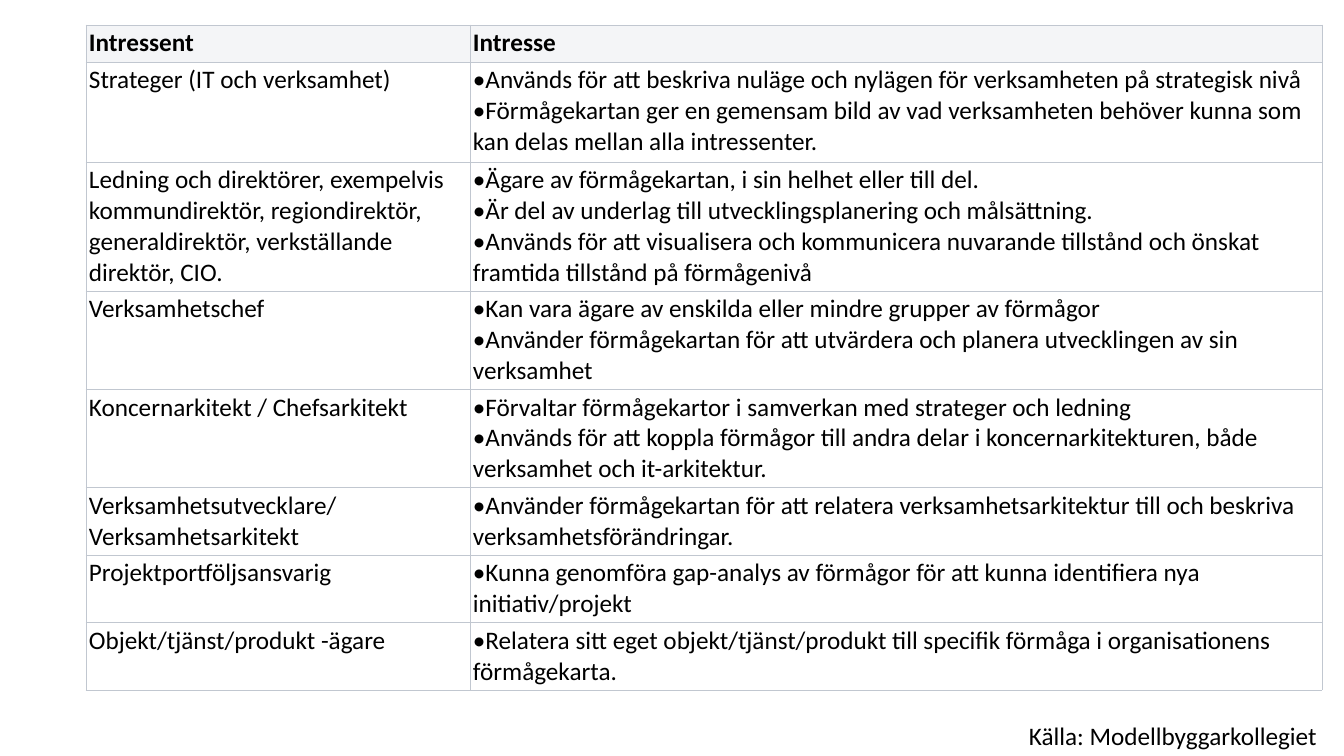
from lxml import etree
from pptx import Presentation
from pptx.dml.color import RGBColor
from pptx.oxml.ns import qn
from pptx.util import Emu, Pt

# Content: stakeholder, interests, row height in px
HEAD = ("Intressent", "Intresse")
HEAD_H = 37
ROWS = [
    ("Strateger (IT och verksamhet)", [
        "Används för att beskriva nuläge och nylägen för verksamheten på strategisk nivå",
        "Förmågekartan ger en gemensam bild av vad verksamheten behöver kunna som kan delas mellan alla intressenter.",
    ], 100),
    ("Ledning och direktörer, exempelvis kommundirektör, regiondirektör, generaldirektör, verkställande direktör, CIO.", [
        "Ägare av förmågekartan, i sin helhet eller till del.",
        "Är del av underlag till utvecklingsplanering och målsättning.",
        "Används för att visualisera och kommunicera nuvarande tillstånd och önskat framtida tillstånd på förmågenivå",
    ], 129),
    ("Verksamhetschef", [
        "Kan vara ägare av enskilda eller mindre grupper av förmågor",
        "Använder förmågekartan för att utvärdera och planera utvecklingen av sin verksamhet",
    ], 98),
    ("Koncernarkitekt / Chefsarkitekt", [
        "Förvaltar förmågekartor i samverkan med strateger och ledning",
        "Används för att koppla förmågor till andra delar i koncernarkitekturen, både verksamhet och it-arkitektur.",
    ], 98),
    ("Verksamhetsutvecklare/ Verksamhetsarkitekt", [
        "Använder förmågekartan för att relatera verksamhetsarkitektur till och beskriva verksamhetsförändringar.",
    ], 67),
    ("Projektportföljsansvarig", [
        "Kunna genomföra gap-analys av förmågor för att kunna identifiera nya initiativ/projekt",
    ], 67),
    ("Objekt/tjänst/produkt -ägare", [
        "Relatera sitt eget objekt/tjänst/produkt till specifik förmåga i organisationens förmågekarta.",
    ], 67),
]
SOURCE = "Källa: Modellbyggarkollegiet"
COLS = (384, 852)
COLORS = {"text": "000000", "head": "F4F5F7", "body": "FFFFFF", "line": "C1C7D0"}
FONT, SIZE = "Calibri", 18
INSET = 3


def px(n):
    return Emu(round(n * 914400 / 100.8))


def color(key):
    return RGBColor.from_string(COLORS[key])


def write(frame, lines, bold=False, bullet=False):
    for i, line in enumerate(lines):
        para = frame.paragraphs[0] if i == 0 else frame.add_paragraph()
        run = para.add_run()
        run.text = line
        run.font.name, run.font.size, run.font.bold = FONT, Pt(SIZE), bold
        run.font.color.rgb = color("text")
        if bullet:
            props = para._p.get_or_add_pPr()
            props.set("marL", "0")
            props.set("indent", "0")
            etree.SubElement(props, qn("a:buFont")).set("typeface", FONT)
            etree.SubElement(props, qn("a:buChar")).set("char", "•")


def border(cell):
    props = cell._tc.get_or_add_tcPr()
    for i, side in enumerate("LRTB"):
        line = etree.Element(qn("a:ln" + side), w=str(Pt(0.6)))
        fill = etree.SubElement(line, qn("a:solidFill"))
        etree.SubElement(fill, qn("a:srgbClr")).set("val", COLORS["line"])
        props.insert(i, line)


def fill_cell(cell, lines, tone, bold=False, bullet=False):
    cell.margin_left = cell.margin_right = px(INSET)
    cell.margin_top = cell.margin_bottom = px(INSET)
    cell.fill.solid()
    cell.fill.fore_color.rgb = color(tone)
    border(cell)
    write(cell.text_frame, lines, bold, bullet)


deck = Presentation()
deck.slide_width, deck.slide_height = px(1344), px(756)
slide = deck.slides.add_slide(deck.slide_layouts[6])

# Stakeholder table
heights = [HEAD_H] + [row[2] for row in ROWS]
table = slide.shapes.add_table(len(heights), len(COLS), px(86), px(25),
                               px(sum(COLS)), px(sum(heights))).table
for col, width in zip(table.columns, COLS):
    col.width = px(width)
for row, height in zip(table.rows, heights):
    row.height = px(height)
for c, label in enumerate(HEAD):
    fill_cell(table.cell(0, c), [label], "head", bold=True)
for r, (party, needs, _) in enumerate(ROWS, 1):
    fill_cell(table.cell(r, 0), [party], "body")
    fill_cell(table.cell(r, 1), needs, "body", bullet=True)

# Source line
box = slide.shapes.add_textbox(px(1019), px(715), px(359), px(40))
box.text_frame.word_wrap = True
write(box.text_frame, [SOURCE])

deck.save("out.pptx")
